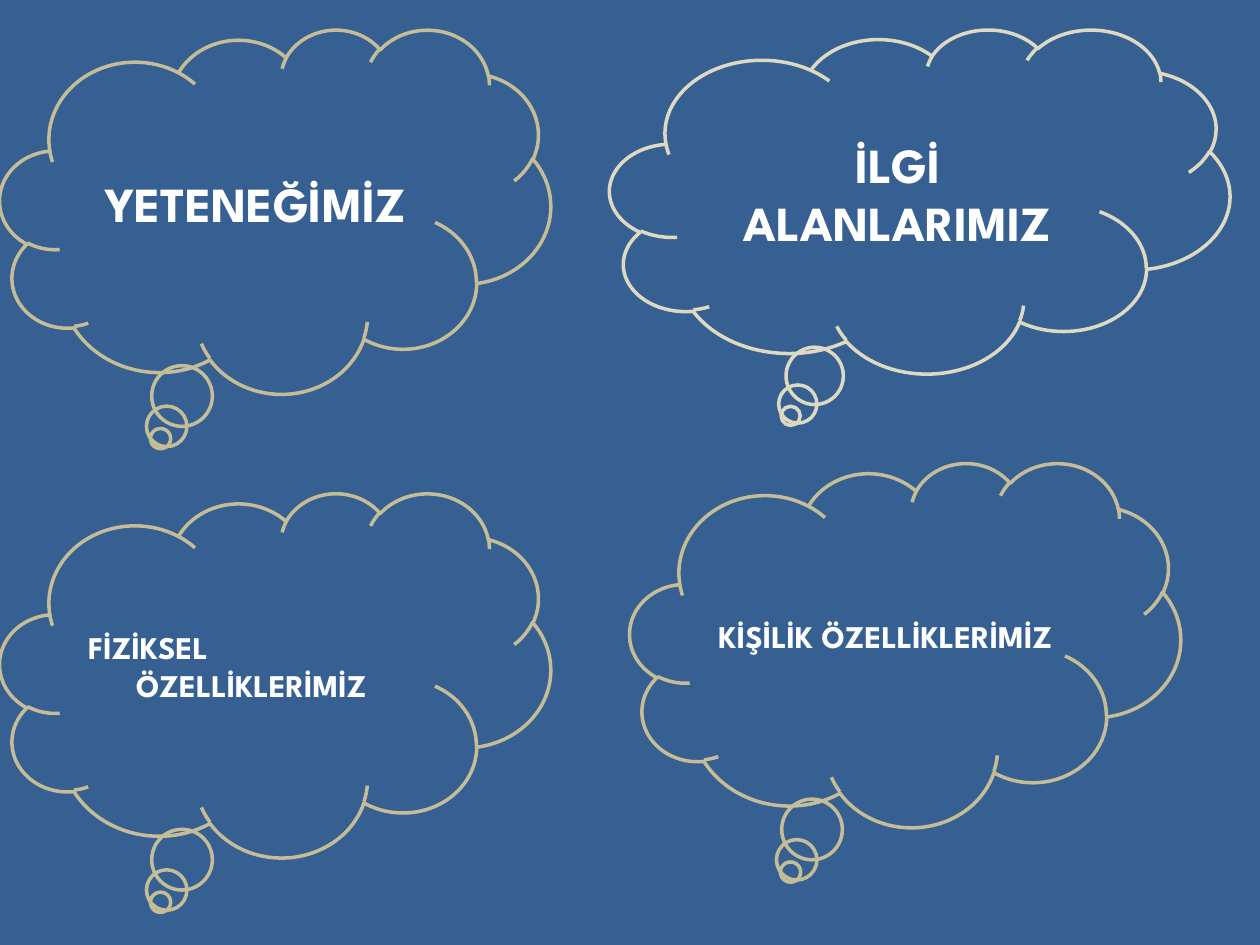
"""Build a slide of four thought clouds about knowing ourselves."""
from dataclasses import dataclass

from pptx import Presentation
from pptx import util as u
from pptx.dml.color import RGBColor
from pptx.enum import shapes, text


@dataclass(frozen=True)
class Theme:
    """Hold the colours, font and type sizes of the slide."""
    background: str = "376092"
    tan: str = "C4BD97"
    cream: str = "DDD9C3"
    white: str = "FFFFFF"
    font: str = "League Spartan"
    large: int = 28
    small: int = 18
    line: int = 2


THEME = Theme()
CENTER = text.PP_ALIGN.CENTER
LEFT = text.PP_ALIGN.LEFT


def set_text(box, wording, size, align=CENTER, hanging=0.38):
    """Write one bold paragraph, with a hanging indent in inches."""
    frame = box.text_frame
    frame.word_wrap = True
    frame.vertical_anchor = text.MSO_ANCHOR.MIDDLE
    para = frame.paragraphs[0]
    para.alignment = align
    if hanging:
        para.space_before = u.Pt(0.2 * size)
        properties = para._p.get_or_add_pPr()
        properties.set("marL", str(u.Inches(hanging)))
        properties.set("indent", str(-u.Inches(hanging)))
    span = para.add_run()
    span.text = wording
    span.font.name = THEME.font
    span.font.size = u.Pt(size)
    span.font.bold = True
    span.font.color.rgb = RGBColor.from_string(THEME.white)


def add_cloud(page, left, top, width=4.37, height=2.89, color=THEME.tan):
    """Add an unfilled thought cloud, measured in inches."""
    cloud = page.shapes.add_shape(
        shapes.MSO_SHAPE.CLOUD_CALLOUT,
        *(u.Inches(length) for length in (left, top, width, height)))
    cloud.shadow.inherit = False
    cloud.fill.background()
    cloud.line.color.rgb = RGBColor.from_string(color)
    cloud.line.width = u.Pt(THEME.line)
    return cloud


def main():
    """Build and save the slide."""
    deck = Presentation()
    deck.slide_width, deck.slide_height = u.Inches(10), u.Inches(7.5)
    page = deck.slides.add_slide(deck.slide_layouts.get_by_name("Blank"))
    page.background.fill.solid()
    page.background.fill.fore_color.rgb = RGBColor.from_string(THEME.background)

    talent = add_cloud(page, 0, 0.23)
    set_text(talent, "YETENEĞİMİZ", THEME.large)
    interests = add_cloud(page, 4.84, 0.23, 4.92, 2.73, THEME.cream)
    set_text(interests, "İLGİ ALANLARIMIZ", THEME.large, hanging=0)
    physical = add_cloud(page, 0, 3.91)
    set_text(physical, "FİZİKSEL ÖZELLİKLERİMİZ", THEME.small, align=LEFT)
    personality = add_cloud(page, 5, 3.67)
    set_text(personality, "KİŞİLİK ÖZELLİKLERİMİZ", THEME.small)

    deck.save("out.pptx")


if __name__ == "__main__":
    main()
